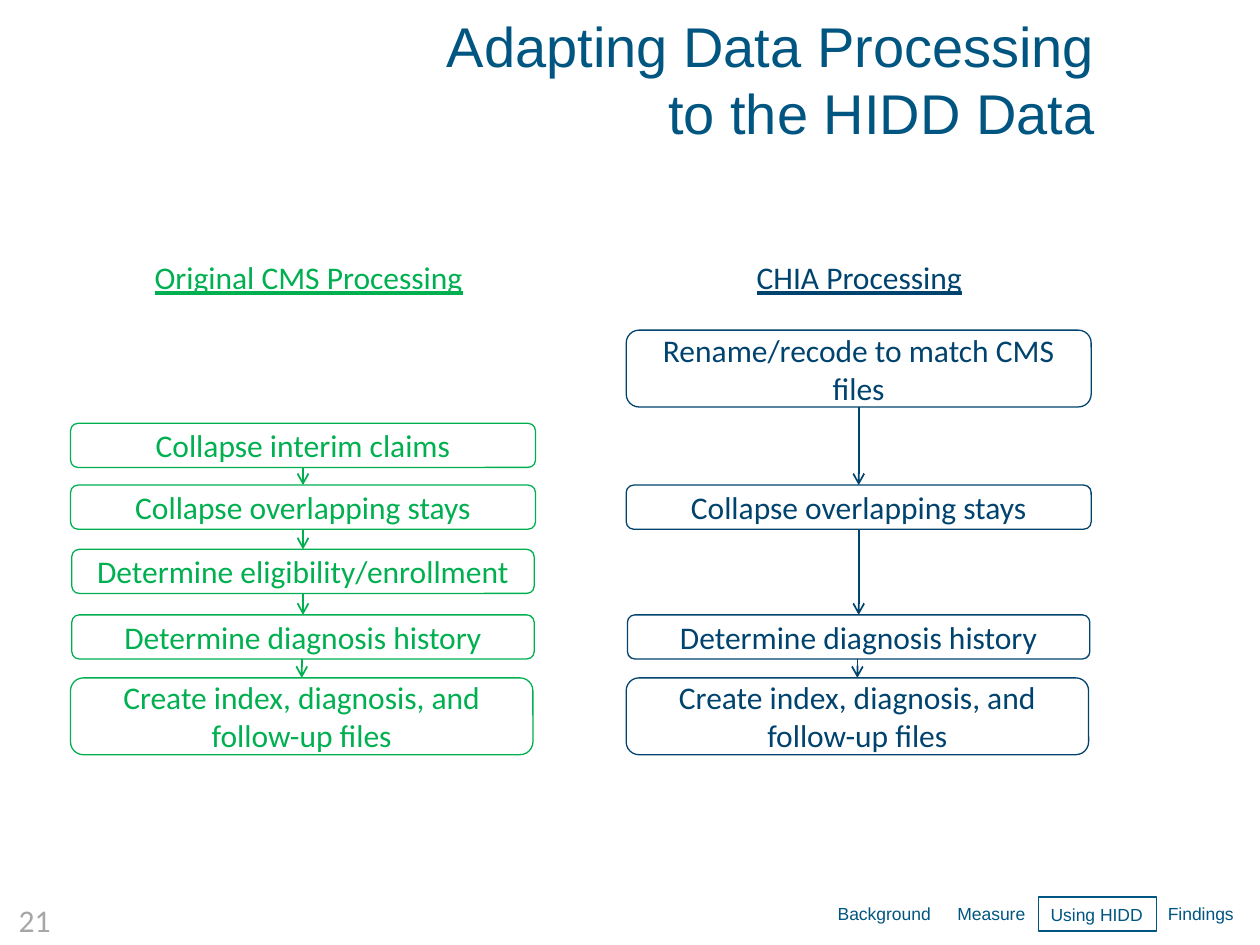
from dataclasses import dataclass

from lxml.etree import SubElement
from pptx import Presentation
from pptx.dml.color import RGBColor as Rgb
from pptx.enum.shapes import MSO_CONNECTOR as Link, MSO_SHAPE as Shape
from pptx.enum.text import MSO_ANCHOR as Anchor, MSO_AUTO_SIZE as Fit, PP_ALIGN as Align
from pptx.oxml.ns import qn
from pptx.util import Inches, Pt


@dataclass(frozen=True)
class Theme:
    title: str = "005581"
    green: str = "00B050"
    navy: str = "00436E"
    grey: str = "A6A6A6"
    head: str = "Arial"
    body: str = "Calibri"
    big: int = 32
    mid: int = 18
    small: int = 10
    edge: float = 0.75
    arrow: float = 1


T = Theme()

# Step: text, inset from column left, top, width, height
RENAME = ("Rename/recode to match CMS files", 0, 2.62, 3.69, 0.61)
CLAIMS = ("Collapse interim claims", 0, 3.36, 3.69, 0.35)
STAYS = ("Collapse overlapping stays", 0, 3.85, 3.69, 0.35)
ENROLL = ("Determine eligibility/enrollment", 0.01, 4.36, 3.67, 0.35)
HISTORY = ("Determine diagnosis history", 0.01, 4.88, 3.67, 0.35)
FILES = ("Create index, diagnosis, and follow-up files", 0, 5.38, 3.67, 0.61)

# Tab: text, left, width
TABS = [("Background", 0, 0.95), ("Measure", 0.95, 0.75),
        ("Using HIDD", 1.69, 0.94), ("Findings", 2.62, 0.73)]
ACTIVE = "Using HIDD"


def write(shape, text, size, font, color, align, wrap=True, line=False):
    frame = shape.text_frame
    frame.text = text
    frame.word_wrap = wrap
    if not wrap:
        frame.auto_size = Fit.SHAPE_TO_FIT_TEXT
    for para in frame.paragraphs:
        para.alignment = align
        for run in para.runs:
            run.font.size = Pt(size)
            run.font.name = font
            run.font.underline = line
            run.font.color.rgb = Rgb.from_string(color)


def add_text(slide, box, *style, **more):
    shape = slide.shapes.add_textbox(*map(Inches, box))
    write(shape, *style, **more)
    return shape


def add_box(slide, kind, box, color):
    shape = slide.shapes.add_shape(kind, *map(Inches, box))
    shape.shadow.inherit = False
    shape.fill.background()
    shape.line.color.rgb = Rgb.from_string(color)
    shape.line.width = Pt(T.edge)
    return shape


def add_arrow(slide, x, top, end, color):
    link = slide.shapes.add_connector(
        Link.STRAIGHT, Inches(x), Inches(top), Inches(x), Inches(end))
    link.line.color.rgb = Rgb.from_string(color)
    link.line.width = Pt(T.arrow)
    SubElement(link.line._get_or_add_ln(), qn("a:tailEnd"), type="arrow")
    SubElement(link._element.spPr, qn("a:effectLst"))


def add_title(slide, box):
    shape = add_text(slide, box, "Adapting Data Processing\vto the HIDD Data",
                     T.big, T.head, T.title, Align.RIGHT)
    shape.text_frame.vertical_anchor = Anchor.MIDDLE


def add_flow(slide, left, head, name, steps, color):
    # Column heading
    add_text(slide, head, name, T.mid, T.body, color, Align.CENTER, line=True)

    # Steps, each joined to the one above
    end = None
    for text, inset, top, width, height in steps:
        x = left + inset
        shape = add_box(slide, Shape.ROUNDED_RECTANGLE,
                        (x, top, width, height), color)
        write(shape, text, T.mid, T.body, color, Align.CENTER)
        shape.text_frame.vertical_anchor = Anchor.MIDDLE
        if end is not None:
            add_arrow(slide, x + width / 2, end, top, color)
        end = top + height


def add_nav(slide, left, top, height):
    for text, inset, width in TABS:
        box = (left + inset, top, width, height)
        style = (text, T.small, T.head, T.title, Align.LEFT)
        if text == ACTIVE:
            shape = add_box(slide, Shape.RECTANGLE, box, T.title)
            write(shape, *style, wrap=False)
        else:
            add_text(slide, box, *style, wrap=False)


def main():
    deck = Presentation()
    deck.slide_width, deck.slide_height = Inches(10), Inches(7.5)
    slide = deck.slides.add_slide(deck.slide_layouts[6])

    add_title(slide, (0.2, 0.07, 8.59, 1.11))

    # Two processing flows
    add_flow(slide, 0.56, (0.57, 2, 3.76, 0.38), "Original CMS Processing",
             [CLAIMS, STAYS, ENROLL, HISTORY, FILES], T.green)
    add_flow(slide, 4.97, (4.98, 2, 3.68, 0.38), "CHIA Processing",
             [RENAME, STAYS, HISTORY, FILES], T.navy)

    # Footer
    add_text(slide, (0, 7.1, 0.5, 0.4), "21", T.mid, T.body, T.grey,
             Align.RIGHT, wrap=False)
    add_nav(slide, 6.55, 7.12, 0.27)

    deck.save("out.pptx")


if __name__ == "__main__":
    main()
